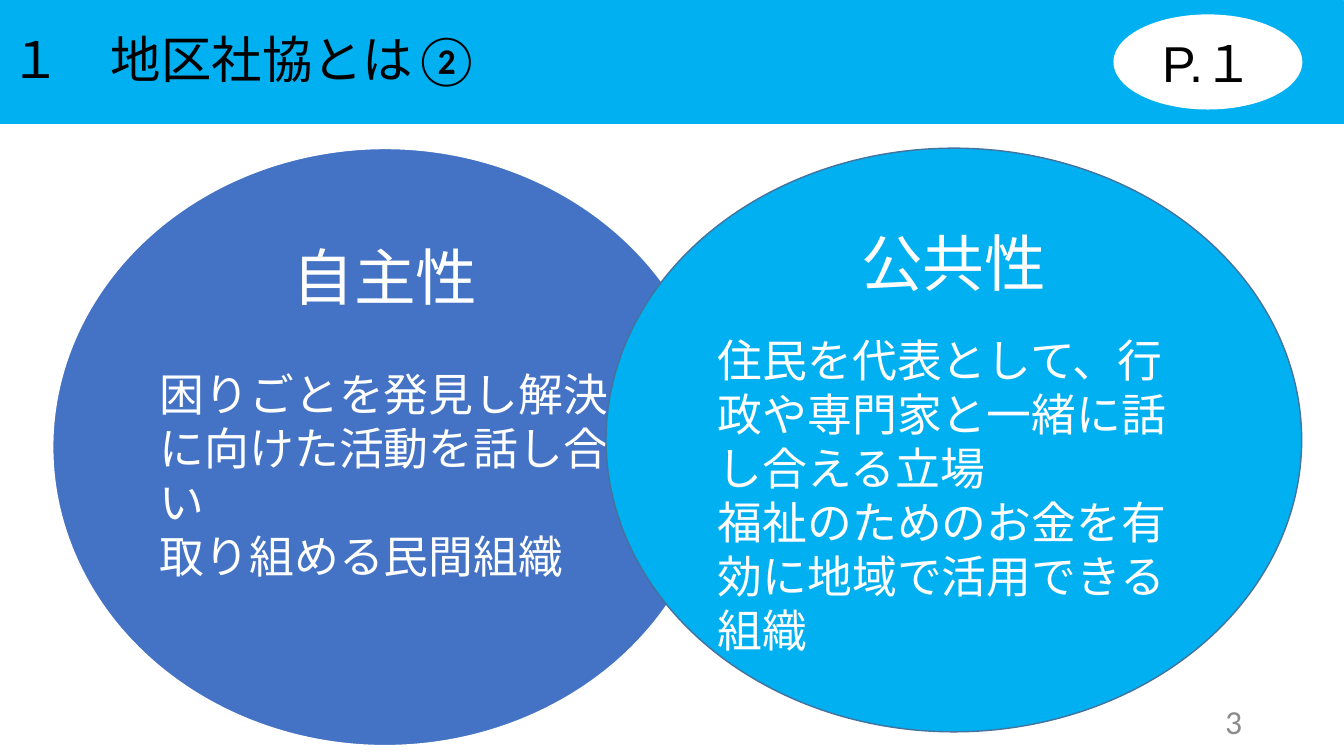
from dataclasses import dataclass

from lxml import etree
from pptx import Presentation
from pptx import util as u
from pptx.dml.color import RGBColor
from pptx.enum import lang, shapes, text
from pptx.oxml import ns

COLOURS = {
    "sky": "00B0F0",
    "blue": "4472C4",
    "edge": "43739E",
    "white": "FFFFFF",
    "black": "000000",
    "grey": "8C8C8C",
}
CJK_FONT = "Noto Sans CJK JP"
LEFT, CENTER, RIGHT = text.PP_ALIGN.LEFT, text.PP_ALIGN.CENTER, text.PP_ALIGN.RIGHT


@dataclass(frozen=True)
class Area:
    left: float
    top: float
    width: float
    height: float


@dataclass(frozen=True)
class Line:
    words: str
    size: float
    font: str = "Calibri"
    colour: str = "white"
    align: text.PP_ALIGN = LEFT
    spacing: float | u.Length | None = None
    after: float = 0


@dataclass(frozen=True)
class Oval:
    area: Area
    fill: str
    edge: str
    edge_width: float
    lines: tuple[Line, ...]
    bottom_inset: float | None = None


def heading(words: str, after: float) -> Line:
    return Line(words, 44, align=CENTER, spacing=u.Pt(54), after=after)


def statement(words: str) -> Line:
    return Line(words, 32, CJK_FONT, spacing=u.Pt(38.6))


OVALS = (
    Oval(Area(82.9, 2, 13.95, 12.4), "white", "white", 1,
         (Line("P.１", 36, "Arial", "black", CENTER),)),
    Oval(Area(3.9, 19.6, 49.5, 79.07), "blue", "white", 1.5,
         (heading("自主性", 38),
          statement("困りごとを発見し解決に向けた活動を話し合い"),
          statement("取り組める民間組織")), bottom_inset=0.74),
    Oval(Area(45.09, 19.6, 51.76, 77.2), "sky", "edge", 1,
         (heading("公共性", 24),
          statement("住民を代表として、行政や専門家と一緒に話し合える立場"),
          statement("福祉のためのお金を有効に地域で活用できる組織"))),
)

presentation = Presentation()
presentation.slide_width = u.Inches(13.33)
presentation.slide_height = u.Inches(7.5)
slide = presentation.slides.add_slide(presentation.slide_layouts[5])


def colour(name: str) -> RGBColor:
    return RGBColor.from_string(COLOURS[name])


def box(area: Area) -> tuple[int, int, int, int]:
    column, row = presentation.slide_width / 100, presentation.slide_height / 100
    return (int(area.left * column), int(area.top * row),
            int(area.width * column), int(area.height * row))


def paint(shape, fill: str, edge: str, edge_width: float) -> None:
    shape.fill.solid()
    shape.fill.fore_color.rgb = colour(fill)
    shape.line.color.rgb = colour(edge)
    shape.line.width = u.Pt(edge_width)


def write(shape, lines: tuple[Line, ...]) -> None:
    frame = shape.text_frame
    frame.word_wrap = True
    frame.auto_size = text.MSO_AUTO_SIZE.NONE
    frame.vertical_anchor = text.MSO_ANCHOR.MIDDLE
    for index, line in enumerate(lines):
        paragraph = frame.add_paragraph() if index else frame.paragraphs[0]
        paragraph.alignment = line.align
        paragraph.space_before = u.Pt(0)
        paragraph.space_after = u.Pt(line.after)
        if line.spacing is not None:
            paragraph.line_spacing = line.spacing
        run = paragraph.add_run()
        run.text = line.words
        run.font.size = u.Pt(line.size)
        run.font.name = line.font
        run.font.language_id = lang.MSO_LANGUAGE_ID.JAPANESE
        run.font.color.rgb = colour(line.colour)
        properties = run.font._element
        east_asian = etree.SubElement(properties, ns.qn("a:ea"))
        east_asian.set("typeface", line.font)


def draw_oval(oval: Oval) -> None:
    shape = slide.shapes.add_shape(shapes.MSO_SHAPE.OVAL, *box(oval.area))
    shape.shadow.inherit = False
    paint(shape, oval.fill, oval.edge, oval.edge_width)
    if oval.bottom_inset is not None:
        shape.text_frame.margin_top = 0
        shape.text_frame.margin_bottom = u.Inches(oval.bottom_inset)
    write(shape, oval.lines)


title = slide.shapes.title
title.left, title.top, title.width, title.height = box(Area(0, 0.13, 100, 16.27))
paint(title, "sky", "sky", 0.75)
write(title, (Line("１　地区社協とは②", 36, colour="black", spacing=0.9),))

page_number = slide.shapes.add_textbox(*box(Area(70.67, 92.67, 22.5, 5.33)))
write(page_number, (Line("3", 24, colour="grey", align=RIGHT),))

for oval in OVALS:
    draw_oval(oval)

presentation.save("out.pptx")
